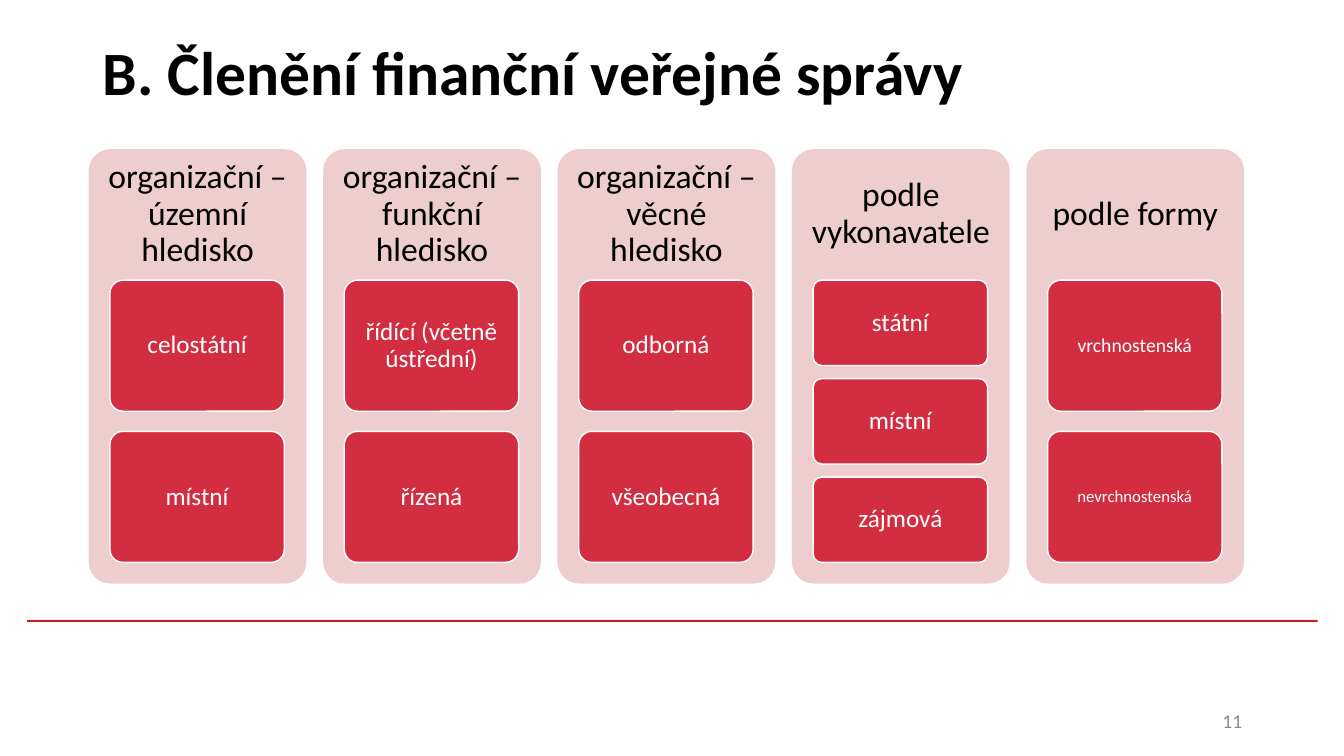
from pptx import Presentation
from pptx.dml.color import RGBColor
from pptx.enum.shapes import MSO_SHAPE
from pptx.enum.text import MSO_ANCHOR, PP_ALIGN
from pptx.util import Inches, Pt

ROUND, RECT = MSO_SHAPE.ROUNDED_RECTANGLE, MSO_SHAPE.RECTANGLE
MIDDLE = MSO_ANCHOR.MIDDLE
LEFT, CENTER, RIGHT = PP_ALIGN.LEFT, PP_ALIGN.CENTER, PP_ALIGN.RIGHT
COLORS = {"black": "000000", "white": "FFFFFF", "gray": "8C8C8C",
          "rule": "CD1F21", "panel": "EECDCF", "card": "D22D40"}


def add_block(kind, box, fill):
    block = slide.shapes.add_shape(kind, *map(Inches, box))
    block.shadow.inherit = False
    block.fill.solid()
    block.fill.fore_color.rgb = RGBColor.from_string(COLORS[fill])
    block.line.fill.background()
    if kind == ROUND:
        block.adjustments[0] = 0.1
    return block


def set_text(shape, text, size, color, align, inset=(0.1, 0.05), space=0.9):
    frame = shape.text_frame
    frame.word_wrap = True
    frame.vertical_anchor = MIDDLE
    frame.margin_left = frame.margin_right = Inches(inset[0])
    frame.margin_top = frame.margin_bottom = Inches(inset[1])
    para = frame.paragraphs[0]
    para.text = text
    para.alignment = align
    para.line_spacing = space
    para.font.name = "Calibri"
    para.font.size = Pt(size)
    para.font.color.rgb = RGBColor.from_string(COLORS[color])
    return para


deck = Presentation()
deck.slide_width, deck.slide_height = Inches(13.33), Inches(7.5)
slide = deck.slides.add_slide(deck.slide_layouts[5])

# Rule below the columns
add_block(RECT, (0.27, 6.15, 12.8, 0.02), "rule")

# Title
title = slide.shapes.title
title.left, title.top = Inches(0.92), Inches(0.02)
title.width, title.height = Inches(11.5), Inches(1.45)
head = set_text(title, "B. Členění finanční veřejné správy", 44, "black", LEFT)
head.font.bold = True

# Slide number
number = slide.shapes.add_textbox(*map(Inches, (9.42, 6.95, 3, 0.4)))
set_text(number, "11", 14, "gray", RIGHT, space=1)

# Columns: heading, then cards with their text sizes
columns = [
    ("organizační – územní hledisko", [("celostátní", 18), ("místní", 18)]),
    ("organizační – funkční hledisko", [("řídící (včetně ústřední)", 18), ("řízená", 18)]),
    ("organizační – věcné hledisko", [("odborná", 18), ("všeobecná", 18)]),
    ("podle vykonavatele", [("státní", 18), ("místní", 18), ("zájmová", 18)]),
    ("podle formy", [("vrchnostenská", 14), ("nevrchnostenská", 12)]),
]
top, stack = 2.78, 2.8
for col, (heading, cards) in enumerate(columns):
    left = 0.88 + col * 2.325
    add_block(ROUND, (left, 1.48, 2.16, 4.31), "panel")
    label = slide.shapes.add_textbox(*map(Inches, (left, 1.48, 2.16, 1.29)))
    set_text(label, heading, 24, "black", CENTER, (0.1, 0.1))

    # Cards share the stack height; each gap is 2/13 of a card
    count = len(cards)
    tall = stack / (count + (count - 1) * 2 / 13)
    for row, (text, size) in enumerate(cards):
        card = add_block(ROUND, (left + 0.21, top + row * tall * 15 / 13, 1.73, tall), "card")
        card.line.color.rgb = RGBColor.from_string(COLORS["white"])
        card.line.width = Pt(1)
        inset = (0.05, 0.04) if size == 18 else (0.03, 0.03)
        set_text(card, text, size, "white", CENTER, inset)

deck.save("out.pptx")
